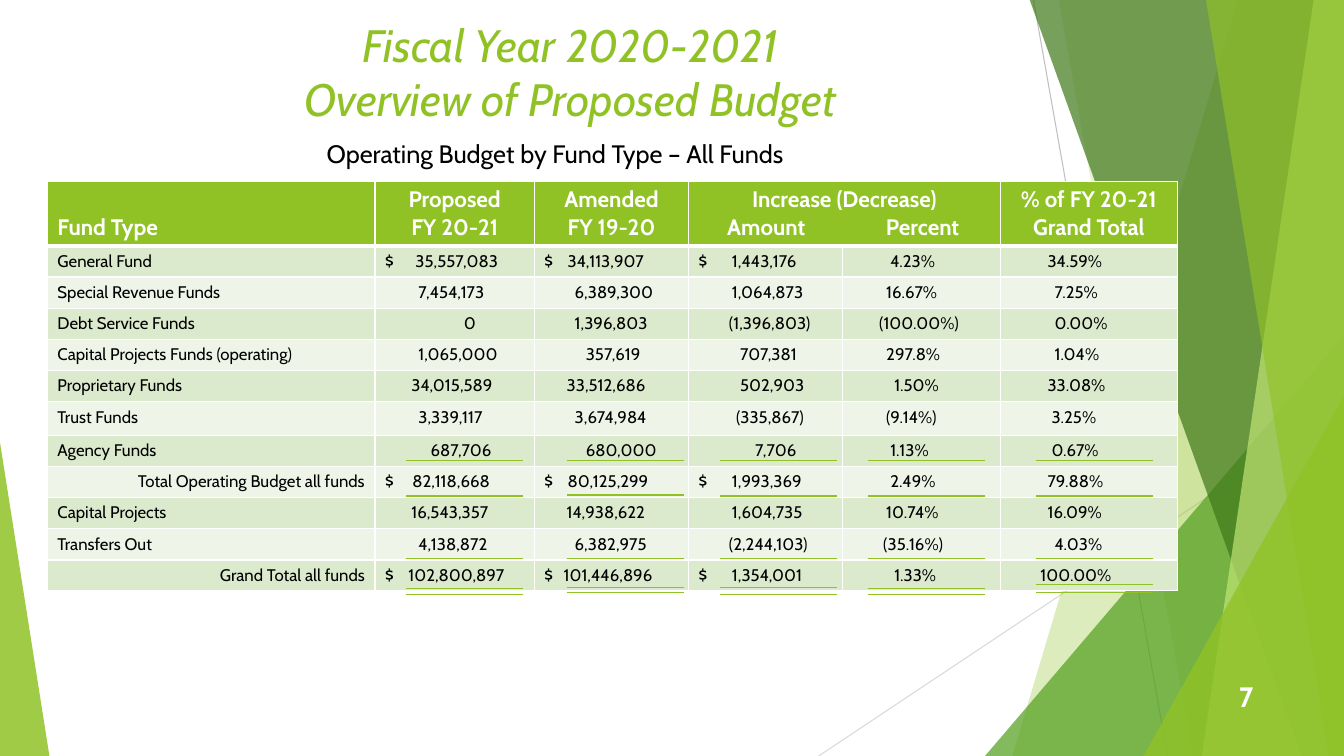
from lxml import etree
from pptx import Presentation
from pptx.dml.color import RGBColor
from pptx.enum.shapes import MSO_CONNECTOR, MSO_SHAPE
from pptx.enum.text import MSO_ANCHOR, PP_ALIGN
from pptx.oxml.ns import qn
from pptx.util import Inches, Pt

LEFT, CENTER, RIGHT = PP_ALIGN.LEFT, PP_ALIGN.CENTER, PP_ALIGN.RIGHT
TOP, MIDDLE, BOTTOM = MSO_ANCHOR.TOP, MSO_ANCHOR.MIDDLE, MSO_ANCHOR.BOTTOM
STRAIGHT = MSO_CONNECTOR.STRAIGHT
TRIANGLE = MSO_SHAPE.ISOSCELES_TRIANGLE

FONT = "Cabin"
WIDTH, HEIGHT = 13.33, 7.5
COLORS = {
    "lime": "90C226", "green": "54A021", "forest": "3F7819", "pale": "C0E474",
    "gray": "BFBFBF", "silver": "D9D9D9", "white": "FFFFFF", "black": "000000",
    "odd": "DBE9CD", "even": "EEF4E8",
}

COLUMN_WIDTHS = [3.25, 1.58, 1.53, 1.53, 1.56, 1.76]
ROW_HEIGHTS = [0.63] + [0.31] * 5 + [0.33] + [0.31] * 4 + [0.3]
HEADERS = {
    0: "Fund Type",
    1: "Proposed\nFY 20-21",
    2: "Amended\nFY 19-20",
    3: "Increase (Decrease)",
    5: "% of FY 20-21 Grand Total",
}
FUNDS = [
    ("General Fund", ("$\t35,557,083", 0.3), ("$\t34,113,907", 0.23),
     ("$\t1,443,176", 0.33), ("4.23%", 0.37), ("34.59%", 0.37)),
    ("Special Revenue Funds", ("7,454,173", 0.33), ("6,389,300", 0.3),
     ("1,064,873", 0.33), ("16.67%", 0.33), ("7.25%", 0.44)),
    ("Debt Service Funds", ("0", 0.78), ("1,396,803", 0.3),
     ("(1,396,803)", 0.3), ("(100.00%)", 0.26), ("0.00%", 0.44)),
    ("Capital Projects Funds (operating)", ("1,065,000", 0.33), ("357,619", 0.41),
     ("707,381", 0.41), ("297.8%", 0.33), ("1.04%", 0.44)),
    ("Proprietary Funds", ("34,015,589", 0.26), ("33,512,686", 0.22),
     ("502,903", 0.41), ("1.50%", 0.41), ("33.08%", 0.37)),
    ("Trust Funds", ("3,339,117", 0.33), ("3,674,984", 0.3),
     ("(335,867)", 0.37), ("(9.14%)", 0.33), ("3.25%", 0.41)),
    ("Agency Funds", ("687,706", 0.45), ("680,000", 0.41),
     ("7,706", 0.56), ("1.13%", 0.37), ("0.67%", 0.41)),
    ("Total Operating Budget all funds", ("$\t82,118,668", 0.27), ("$\t80,125,299", 0.23),
     ("$\t1,993,369", 0.33), ("2.49%", 0.37), ("79.88%", 0.37)),
    ("Capital Projects", ("16,543,357", 0.26), ("14,938,622", 0.22),
     ("1,604,735", 0.33), ("10.74%", 0.33), ("16.09%", 0.37)),
    ("Transfers Out", ("4,138,872", 0.33), ("6,382,975", 0.3),
     ("(2,244,103)", 0.3), ("(35.16%)", 0.3), ("4.03%", 0.44)),
    ("Grand Total all funds", ("$\t102,800,897", 0.23), ("$\t101,446,896", 0.19),
     ("$\t1,354,001", 0.33), ("1.33%", 0.41), ("100.00%", 0.3)),
]
TOTAL_RULES = {
    4.03: (4.57, 4.92, 5.54, 5.84, 5.9),
    5.62: (4.57, 4.91, 5.54, 5.83, 5.88),
    7.14: (4.57, 4.92, 5.54, 5.83, 5.9),
    8.61: (4.57, 4.92, 5.54, 5.84, 5.9),
    10.28: (4.57, 4.92, 5.54, 5.8, 5.88),
}
RULE_LENGTH = 1.16


def rgb(name):
    return RGBColor.from_string(COLORS[name])


def write_text(frame, text, size=12, color="black", bold=False, italic=False,
               align=LEFT, indent=0, tabs=()):
    frame.word_wrap = True
    for index, line in enumerate(text.split("\n")):
        paragraph = frame.add_paragraph() if index else frame.paragraphs[0]
        paragraph.text = line
        paragraph.alignment = align
        properties = paragraph._p.get_or_add_pPr()
        if indent:
            properties.set("marL", str(Inches(indent)))
            properties.set("indent", "0")
        if tabs:
            stops = etree.SubElement(properties, qn("a:tabLst"))
            for position, kind in tabs:
                etree.SubElement(stops, qn("a:tab"), pos=str(Inches(position)), algn=kind)
        for run in paragraph.runs:
            font = run.font
            font.name, font.size = FONT, Pt(size)
            font.bold, font.italic = bold, italic
            font.color.rgb = rgb(color)


def add_text_box(slide, left, top, width, height, text, anchor=TOP, **style):
    box = slide.shapes.add_textbox(Inches(left), Inches(top), Inches(width), Inches(height))
    box.text_frame.vertical_anchor = anchor
    write_text(box.text_frame, text, **style)


def add_line(slide, start, end, color, width):
    line = slide.shapes.add_connector(STRAIGHT, *map(Inches, start + end))
    line.line.color.rgb = rgb(color)
    line.line.width = Pt(width)
    etree.SubElement(line._element.spPr, qn("a:effectLst"))


def fill_facet(shape, color, opacity):
    shape.shadow.inherit = False
    shape.line.fill.background()
    shape.fill.solid()
    shape.fill.fore_color.rgb = rgb(color)
    color_element = shape._element.spPr.find(qn("a:solidFill"))[0]
    etree.SubElement(color_element, qn("a:alpha"), val=str(opacity * 1000))


def add_band(slide, top_x, bottom_x, color, opacity):
    corners = [(WIDTH, -0.01), (WIDTH, HEIGHT), (bottom_x, HEIGHT)]
    builder = slide.shapes.build_freeform(Inches(top_x), Inches(-0.01), scale=1.0)
    builder.add_line_segments([(Inches(x), Inches(y)) for x, y in corners], close=True)
    fill_facet(builder.convert_to_shape(), color, opacity)


def add_triangle(slide, left, top, width, apex, color, opacity):
    shape = slide.shapes.add_shape(TRIANGLE, Inches(left), Inches(top),
                                   Inches(width), Inches(HEIGHT - top))
    shape.adjustments[0] = apex
    fill_facet(shape, color, opacity)


def add_backdrop(slide):
    add_line(slide, (10.25, 0), (11.58, HEIGHT), "gray", 0.75)
    add_line(slide, (WIDTH, 4.03), (8.12, HEIGHT), "silver", 0.75)
    add_band(slide, 12.28, 10.04, "lime", 30)
    add_band(slide, 10.5, 11.83, "lime", 20)
    add_triangle(slide, 9.77, 3.33, 3.56, 1, "green", 72)
    add_band(slide, 10.21, 12.91, "forest", 70)
    add_band(slide, 13.03, 11.92, "pale", 70)
    add_band(slide, 11.96, 13.18, "lime", 65)
    add_triangle(slide, 11.34, 3.93, 1.99, 1, "lime", 80)
    add_triangle(slide, 0, 4.39, 0.49, 0, "lime", 85)


def format_cell(cell, fill, bottom=1):
    properties = cell._tc.get_or_add_tcPr()
    for side, width in (("L", 1), ("R", 1), ("T", 1), ("B", bottom)):
        border = etree.SubElement(properties, qn("a:ln" + side), w=str(Pt(width)))
        solid = etree.SubElement(border, qn("a:solidFill"))
        etree.SubElement(solid, qn("a:srgbClr"), val=COLORS["white"])
    cell.fill.solid()
    cell.fill.fore_color.rgb = rgb(fill)


def add_fund_table(slide):
    frame = slide.shapes.add_table(len(ROW_HEIGHTS), len(COLUMN_WIDTHS), Inches(0.47), Inches(1.8),
                                   Inches(sum(COLUMN_WIDTHS)), Inches(sum(ROW_HEIGHTS)))
    table = frame.table
    for column, width in zip(table.columns, COLUMN_WIDTHS):
        column.width = Inches(width)
    for row, height in zip(table.rows, ROW_HEIGHTS):
        row.height = Inches(height)

    header_style = {"size": 16, "color": "white", "bold": True}
    table.cell(0, 3).merge(table.cell(0, 4))
    for index in range(len(COLUMN_WIDTHS)):
        format_cell(table.cell(0, index), "lime", bottom=3)
    for index, text in HEADERS.items():
        write_text(table.cell(0, index).text_frame, text,
                   align=CENTER if index else LEFT, **header_style)
    table.cell(0, 0).vertical_anchor = BOTTOM
    change_frame = table.cell(0, 3).text_frame
    change_frame.add_paragraph()
    write_paragraph = change_frame.paragraphs[1]
    write_paragraph.text = "\tAmount\tPercent"
    stops = etree.SubElement(write_paragraph._p.get_or_add_pPr(), qn("a:tabLst"))
    for position in (0.67, 2.22):
        etree.SubElement(stops, qn("a:tab"), pos=str(Inches(position)), algn="ctr")
    font = write_paragraph.runs[0].font
    font.name, font.size, font.bold = FONT, Pt(16), True
    font.color.rgb = rgb("white")

    for row, (label, *amounts) in enumerate(FUNDS, start=1):
        for column in range(len(COLUMN_WIDTHS)):
            format_cell(table.cell(row, column), "odd" if row % 2 else "even")
        write_text(table.cell(row, 0).text_frame, label,
                   align=RIGHT if "all funds" in label else LEFT)
        for column, (amount, offset) in enumerate(amounts, start=1):
            place = {"tabs": [(offset, "l")]} if "\t" in amount else {"indent": offset}
            write_text(table.cell(row, column).text_frame, amount, **place)


def add_total_rules(slide):
    for left, heights in TOTAL_RULES.items():
        for y in heights:
            add_line(slide, (left, y), (left + RULE_LENGTH, y), "lime", 1)


def main():
    presentation = Presentation()
    presentation.slide_width, presentation.slide_height = Inches(WIDTH), Inches(HEIGHT)
    slide = presentation.slides.add_slide(presentation.slide_layouts[5])
    add_backdrop(slide)
    title = slide.shapes.title
    title.left, title.top = Inches(0.78), Inches(0.12)
    title.width, title.height = Inches(9.75), Inches(1.29)
    title.text_frame.vertical_anchor = TOP
    write_text(title.text_frame, "Fiscal Year 2020-2021\vOverview of Proposed Budget",
               size=32.4, color="lime", italic=True, align=CENTER)
    add_fund_table(slide)
    add_text_box(slide, 0.67, 1.32, 9.67, 0.4, "Operating Budget by Fund Type – All Funds",
                 size=18, align=CENTER)
    add_total_rules(slide)
    add_text_box(slide, 11.78, 6.71, 0.75, 0.4, "7", anchor=MIDDLE,
                 size=20, color="white", bold=True, align=RIGHT)
    presentation.save("out.pptx")


if __name__ == "__main__":
    main()
